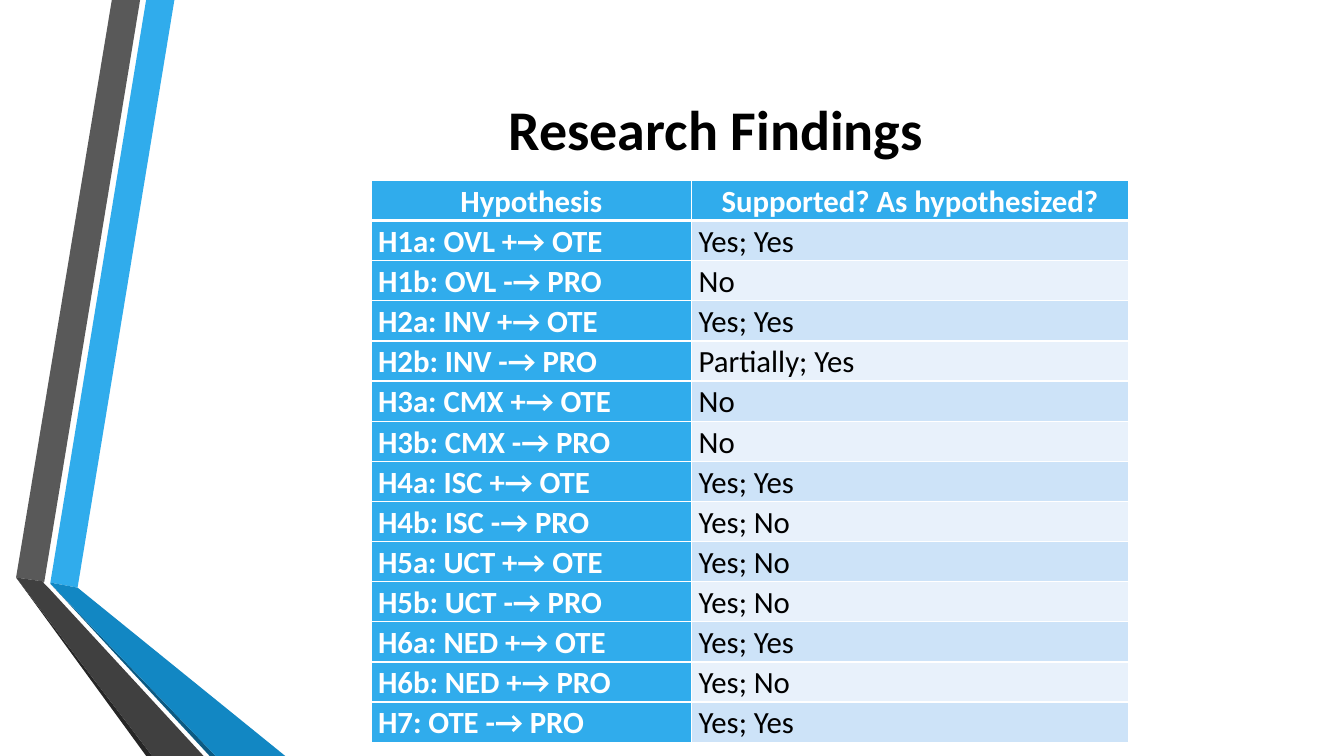
from pptx import Presentation
from pptx.dml.color import RGBColor
from pptx.enum.text import MSO_ANCHOR, MSO_AUTO_SIZE, PP_ALIGN
from pptx.oxml import parse_xml
from pptx.oxml.ns import nsdecls
from pptx.util import Inches, Pt

FONT = "Calibri"
WHITE = RGBColor(0xFF, 0xFF, 0xFF)
BLACK = RGBColor(0, 0, 0)
BLUE = RGBColor(0x30, 0xAC, 0xEC)
MID_BLUE = RGBColor(0x12, 0x87, 0xC3)
DEEP_BLUE = RGBColor(0x0C, 0x5A, 0x82)
GRAY = RGBColor(0x59, 0x59, 0x59)
DARK_GRAY = RGBColor(0x40, 0x40, 0x40)
NEAR_BLACK = RGBColor(0x26, 0x26, 0x26)
BANDS = (RGBColor(0xCD, 0xE3, 0xF8), RGBColor(0xE8, 0xF1, 0xFB))

# Ribbon outlines in hundredths of an inch, from back to front
RIBBONS = [
    (BLUE, [(50, 578), (77, 583), (173, 0), (145, 0)]),
    (GRAY, [(139, 0), (111, 0), (16, 573), (44, 577)]),
    (NEAR_BLACK, [(16, 573), (145, 750), (151, 750)]),
    (DEEP_BLUE, [(50, 579), (208, 750), (214, 750)]),
    (MID_BLUE, [(50, 579), (214, 750), (283, 750), (77, 583), (50, 578)]),
    (DARK_GRAY, [(202, 750), (48, 583), (43, 578), (44, 577), (16, 573),
                 (151, 750)]),
]

HEADER = ("Hypothesis", "Supported? As hypothesized?")
FINDINGS = [
    ("H1a: OVL +→ OTE", "Yes; Yes"),
    ("H1b: OVL -→ PRO", "No"),
    ("H2a: INV +→ OTE", "Yes; Yes"),
    ("H2b: INV -→ PRO", "Partially; Yes"),
    ("H3a: CMX +→ OTE", "No"),
    ("H3b: CMX -→ PRO", "No"),
    ("H4a: ISC +→ OTE", "Yes; Yes"),
    ("H4b: ISC -→ PRO", "Yes; No"),
    ("H5a: UCT +→ OTE", "Yes; No"),
    ("H5b: UCT -→ PRO", "Yes; No"),
    ("H6a: NED +→ OTE", "Yes; Yes"),
    ("H6b: NED +→ PRO", "Yes; No"),
    ("H7: OTE -→ PRO", "Yes; Yes"),
]


def add_ribbons(slide):
    group = slide.shapes.add_group_shape()
    for color, (start, *rest) in RIBBONS:
        builder = group.shapes.build_freeform(*start, scale=Inches(0.01))
        builder.add_line_segments(rest, close=True)
        sp = builder.convert_to_shape()
        sp.shadow.inherit = False
        sp.fill.solid()
        sp.fill.fore_color.rgb = color
        sp.line.fill.background()


def set_title(slide, text, left, top, width, height):
    title = slide.shapes.title
    title.left, title.top = Inches(left), Inches(top)
    title.width, title.height = Inches(width), Inches(height)
    tf = title.text_frame
    tf.text = text
    tf.auto_size = MSO_AUTO_SIZE.NONE
    tf.vertical_anchor = MSO_ANCHOR.MIDDLE
    p = tf.paragraphs[0]
    p.alignment = PP_ALIGN.CENTER
    p.font.name, p.font.size, p.font.bold = FONT, Pt(40), True
    p.font.color.rgb = BLACK


def set_borders(cell, is_header, below_header):
    """Draw white edges, with a heavy one under the header row."""
    widths = {"lnL": 1, "lnR": 1, "lnT": 3 if below_header else 1,
              "lnB": 3 if is_header else 1}
    tc_pr = cell._tc.get_or_add_tcPr()
    for i, (side, width) in enumerate(widths.items()):
        tc_pr.insert(i, parse_xml(
            f'<a:{side} {nsdecls("a")} w="{Pt(width)}"><a:solidFill>'
            f'<a:srgbClr val="{WHITE}"/></a:solidFill></a:{side}>'))


def fill_cell(cell, text, row, col):
    is_header = row == 0
    strong = is_header or col == 0
    cell.margin_left = cell.margin_right = Inches(0.07)
    cell.margin_top = cell.margin_bottom = 0
    cell.fill.solid()
    cell.fill.fore_color.rgb = BLUE if strong else BANDS[(row - 1) % 2]
    cell.text = text
    p = cell.text_frame.paragraphs[0]
    p.alignment = PP_ALIGN.CENTER if is_header else PP_ALIGN.LEFT
    p.line_spacing = 1.07
    p.font.name, p.font.size, p.font.bold = FONT, Pt(22), strong
    p.font.color.rgb = WHITE if strong else BLACK
    set_borders(cell, is_header, row == 1)


def add_findings_table(slide, left, top, col_widths, row_height):
    rows = [HEADER, *FINDINGS]
    table = slide.shapes.add_table(
        len(rows), len(col_widths), Inches(left), Inches(top),
        Inches(sum(col_widths)), Inches(row_height * len(rows))).table
    table.first_col = True
    for column, width in zip(table.columns, col_widths):
        column.width = Inches(width)
    for r, texts in enumerate(rows):
        for c, text in enumerate(texts):
            fill_cell(table.cell(r, c), text, r, c)


def main():
    prs = Presentation()
    prs.slide_width, prs.slide_height = Inches(13.33), Inches(7.5)
    slide = prs.slides.add_slide(prs.slide_layouts[5])
    add_ribbons(slide)
    set_title(slide, "Research Findings", 1.62, 0.75, 10.96, 1.04)
    add_findings_table(slide, 3.68, 1.79, (3.18, 4.33), 0.35)
    prs.save("out.pptx")


if __name__ == "__main__":
    main()
